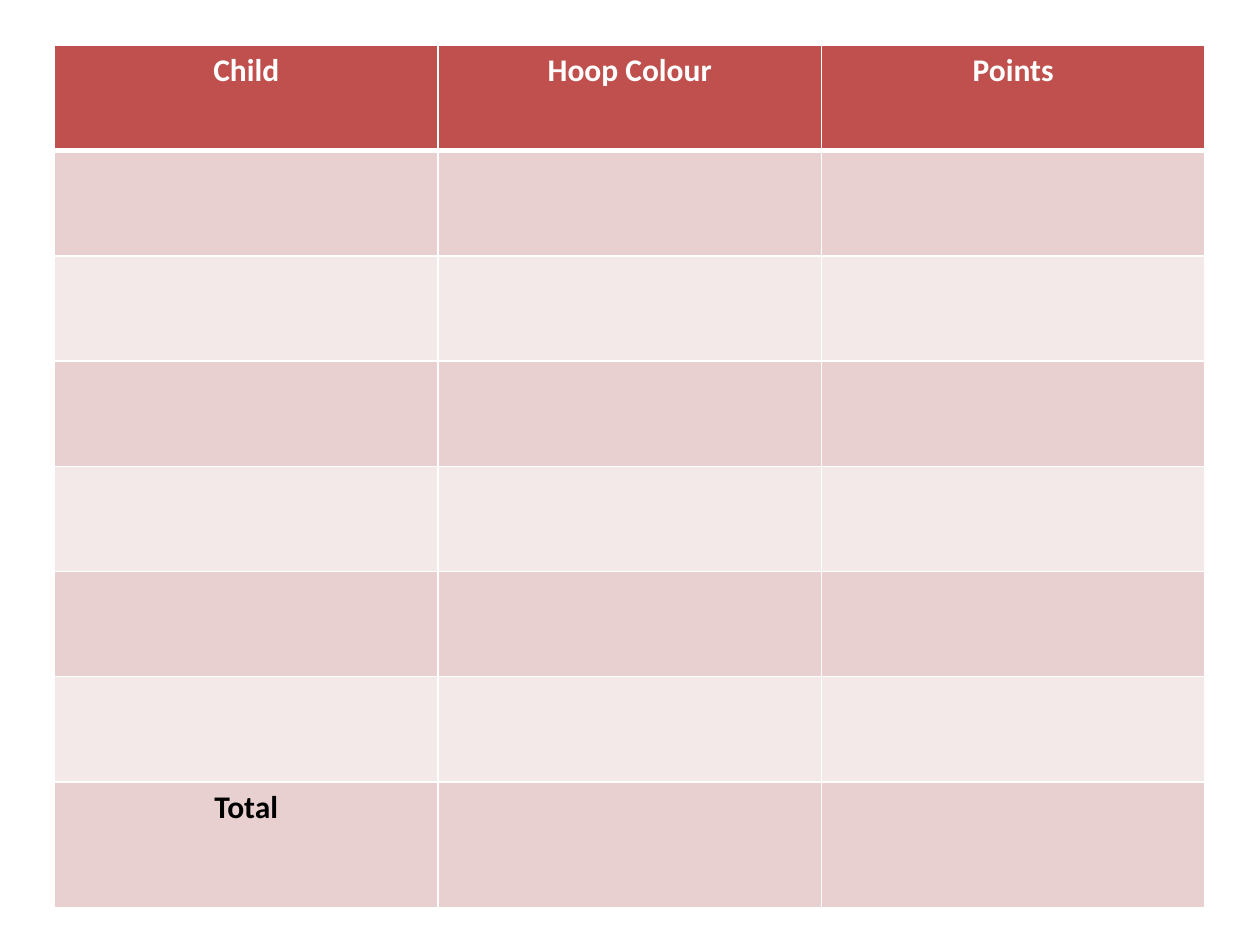
from lxml.etree import SubElement
from pptx import Presentation
from pptx.dml.color import RGBColor
from pptx.enum.text import PP_ALIGN as Align
from pptx.oxml.ns import qn
from pptx.util import Cm, Pt

HEADERS = ["Child", "Hoop Colour", "Points"]
BLANK_ROWS = 6
ROWS = [HEADERS] + [["", "", ""]] * BLANK_ROWS + [["Total", "", ""]]
HEADER_FILL, BANDS = "C0504D", ["F4E9E9", "E8D0D0"]
WHITE, BLACK = "FFFFFF", "000000"
LEFT, TOP = 1.1, 0.92
COL_WIDTH, ROW_HEIGHT, TOTAL_HEIGHT = 7.73, 2.12, 2.54


def rgb(value):
    return RGBColor.from_string(value)


def add_borders(cell, widths):
    tcPr = cell._tc.get_or_add_tcPr()
    for side, width in widths.items():
        ln = SubElement(tcPr, qn(f"a:ln{side}"), w=str(Pt(width)))
        SubElement(SubElement(ln, qn("a:solidFill")), qn("a:srgbClr"), val=WHITE)


def fill_cell(cell, text, row):
    header = row == 0
    add_borders(cell, {"L": 1, "R": 1, "T": 3 if row == 1 else 1, "B": 3 if header else 1})
    cell.fill.solid()
    cell.fill.fore_color.rgb = rgb(HEADER_FILL if header else BANDS[row % 2])
    p = cell.text_frame.paragraphs[0]
    p.alignment = Align.CENTER
    if text:
        r = p.add_run()
        r.text = text
        r.font.name = "Calibri"
        r.font.size = Pt(18)
        r.font.bold = True
        r.font.color.rgb = rgb(WHITE if header else BLACK)


prs = Presentation()
prs.slide_width, prs.slide_height = Cm(25.4), Cm(19.05)
s = prs.slides.add_slide(prs.slide_layouts[6])

heights = [ROW_HEIGHT] * (len(ROWS) - 1) + [TOTAL_HEIGHT]
table = s.shapes.add_table(
    len(ROWS), len(HEADERS), Cm(LEFT), Cm(TOP),
    Cm(COL_WIDTH * len(HEADERS)), Cm(sum(heights)),
).table
for column in table.columns:
    column.width = Cm(COL_WIDTH)
for i, (texts, height) in enumerate(zip(ROWS, heights)):
    table.rows[i].height = Cm(height)
    for j, text in enumerate(texts):
        fill_cell(table.cell(i, j), text, i)

prs.save("out.pptx")
